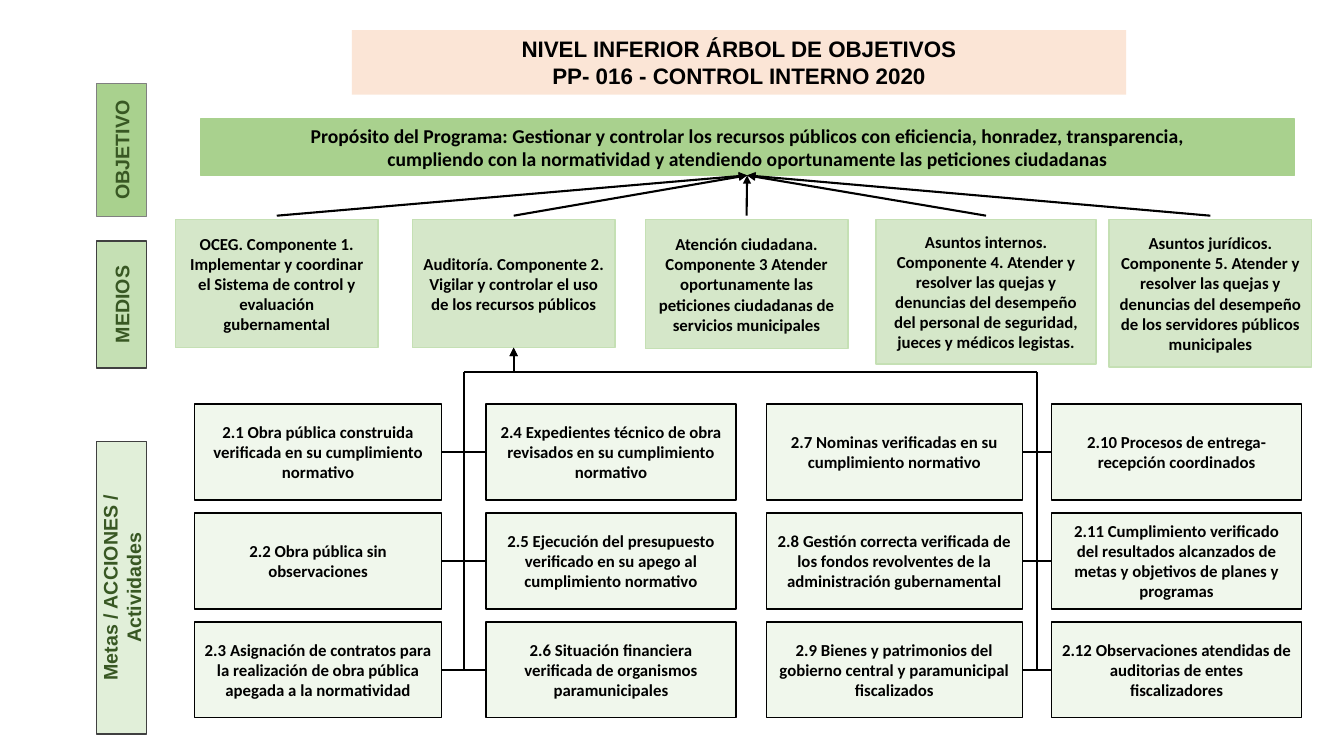
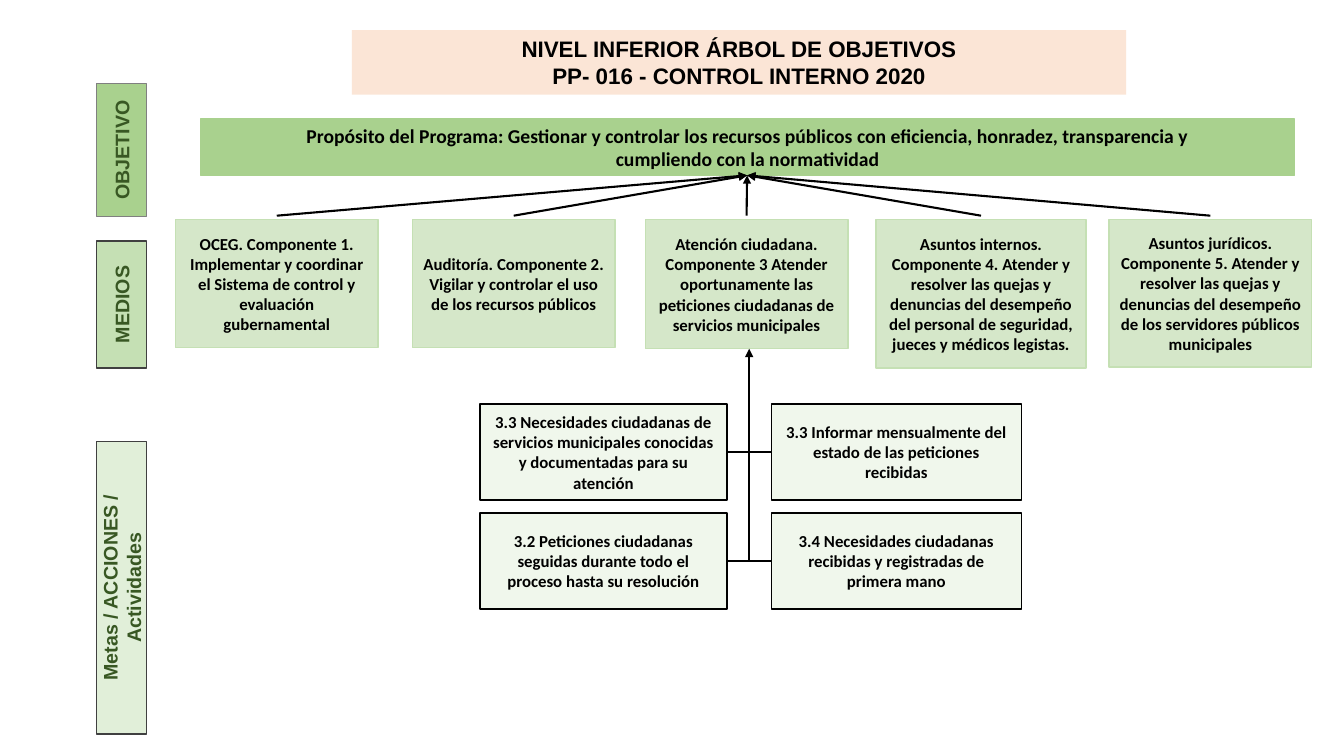
from dataclasses import dataclass

import pptx
import pptx.dml.color
import pptx.enum.shapes
import pptx.enum.text
import pptx.oxml
import pptx.oxml.ns
import pptx.util

SHAPE = pptx.enum.shapes.MSO_SHAPE
CONNECTOR = pptx.enum.shapes.MSO_CONNECTOR
ANCHOR = pptx.enum.text.MSO_ANCHOR
Point = tuple[float, float]

BLACK, DARK_GREEN = "000000", "385723"
MID_GREEN, PALE_GREEN = "A9D18E", "C5E0B4"


@dataclass(frozen=True)
class Style:
    fill: str
    line: str | None
    size: int
    font: str = "Calibri"
    color: str = BLACK
    alpha: int = 100
    shape: int = SHAPE.FLOWCHART_PROCESS
    anchor: int = ANCHOR.MIDDLE


@dataclass(frozen=True)
class Area:
    x: float
    y: float
    w: float
    h: float

    @property
    def cx(self) -> float:
        return self.x + self.w / 2

    @property
    def bottom(self) -> float:
        return self.y + self.h


@dataclass(frozen=True)
class Label:
    text: str
    y: float
    h: float
    style: Style


@dataclass(frozen=True)
class Column:
    x: float
    w: float
    texts: list[str]


@dataclass(frozen=True)
class Tree:
    purpose: str
    internal_size: Point
    parent: int
    pairs: list[tuple[Column, Column]]


TITLE = Style("FBE5D6", None, 16, "Arial", shape=SHAPE.RECTANGLE, anchor=ANCHOR.TOP)
PURPOSE = Style(MID_GREEN, MID_GREEN, 14)
COMPONENT = Style("70AD47", PALE_GREEN, 12, alpha=29)
ACTIVITY = Style(PALE_GREEN, BLACK, 12, alpha=25)

TITLE_TEXT = "NIVEL INFERIOR ÁRBOL DE OBJETIVOS\nPP- 016 - CONTROL INTERNO 2020"
TITLE_AREA = Area(3.49, 0.3, 7.68, 0.64)
PURPOSE_AREA = Area(1.99, 1.18, 10.85, 0.56)
ARROW_TARGET = (7.41, PURPOSE_AREA.bottom)

LABEL_X, LABEL_W = 0.96, 0.49
LABELS = [
    Label("OBJETIVO", 0.83, 1.32, Style(MID_GREEN, "808080", 14, "Arial", DARK_GREEN)),
    Label("MEDIOS", 2.39, 1.26, Style(PALE_GREEN, "404040", 14, "Arial", DARK_GREEN)),
    Label("Metas / ACCIONES / Actividades", 4.38, 2.9,
          Style(PALE_GREEN, "404040", 14, "Arial", DARK_GREEN, 50)),
]

COMPONENT_Y = 2.18
INTERNAL = 3
COMPONENTS = [
    (1.74, 2.01, 1.27, "OCEG. Componente 1. Implementar y coordinar el Sistema de control "
                       "y evaluación gubernamental"),
    (4.09, 2.01, 1.27, "Auditoría. Componente 2. Vigilar y controlar el uso de los "
                       "recursos públicos"),
    (6.4, 2.01, 1.28, "Atención ciudadana. Componente 3 Atender oportunamente las "
                      "peticiones ciudadanas de servicios municipales"),
    (8.69, 2.18, 1.43, "Asuntos internos. Componente 4. Atender y resolver las quejas y "
                       "denuncias del desempeño del personal de seguridad, jueces y "
                       "médicos legistas."),
    (11, 2.01, 1.46, "Asuntos jurídicos. Componente 5. Atender y resolver las quejas y "
                     "denuncias del desempeño de los servidores públicos municipales"),
]

ROW_Y, ROW_PITCH, ROW_H = 4.01, 1.08, 0.95
TRUNK_Y = 3.69

TREES = [
    Tree(
        "Propósito del Programa: Gestionar y controlar los recursos públicos con "
        "eficiencia, honradez, transparencia,\ncumpliendo con la normatividad y "
        "atendiendo oportunamente las peticiones ciudadanas",
        (2.18, 1.43), 1,
        [
            (Column(1.93, 2.45, [
                "2.1 Obra pública construida verificada en su cumplimiento normativo",
                "2.2 Obra pública sin observaciones",
                "2.3 Asignación de contratos para la realización de obra pública "
                "apegada a la normatividad"]),
             Column(4.82, 2.48, [
                "2.4 Expedientes técnico de obra revisados en su cumplimiento normativo",
                "2.5 Ejecución del presupuesto verificado en su apego al cumplimiento "
                "normativo",
                "2.6 Situación financiera verificada de organismos paramunicipales"])),
            (Column(7.6, 2.54, [
                "2.7 Nominas verificadas en su cumplimiento normativo",
                "2.8 Gestión correcta verificada de los fondos revolventes de la "
                "administración gubernamental",
                "2.9 Bienes y patrimonios del gobierno central y paramunicipal "
                "fiscalizados"]),
             Column(10.43, 2.48, [
                "2.10 Procesos de entrega-recepción coordinados",
                "2.11 Cumplimiento verificado del resultados alcanzados de metas y "
                "objetivos de planes y programas",
                "2.12 Observaciones atendidas de auditorias de entes fiscalizadores"])),
        ]),
    Tree(
        "Propósito del Programa: Gestionar y controlar los recursos públicos con "
        "eficiencia, honradez, transparencia y\ncumpliendo con la normatividad",
        (2.08, 1.47), 2,
        [
            (Column(4.76, 2.45, [
                "3.3 Necesidades ciudadanas de servicios municipales conocidas y "
                "documentadas para su atención",
                "3.2 Peticiones ciudadanas seguidas durante todo el proceso hasta su "
                "resolución"]),
             Column(7.65, 2.48, [
                "3.3 Informar mensualmente del estado de las peticiones recibidas",
                "3.4 Necesidades ciudadanas recibidas y registradas de primera mano"])),
        ]),
]


def rgb(color: str) -> pptx.dml.color.RGBColor:
    return pptx.dml.color.RGBColor.from_string(color)


def add_box(s, area: Area, text: str, style: Style, rotation: int = 0):
    sp = s.shapes.add_shape(style.shape, *(pptx.util.Inches(v) for v in
                                           (area.x, area.y, area.w, area.h)))
    sp.rotation = rotation
    sp.shadow.inherit = False
    sp.fill.solid()
    sp.fill.fore_color.rgb = rgb(style.fill)
    if style.alpha < 100:
        clr = sp._element.spPr.find(".//" + pptx.oxml.ns.qn("a:srgbClr"))
        alpha = pptx.oxml.parse_xml(
            f'<a:alpha {pptx.oxml.ns.nsdecls("a")} val="{style.alpha * 1000}"/>')
        clr.append(alpha)
    if style.line:
        sp.line.color.rgb = rgb(style.line)
        sp.line.width = pptx.util.Pt(1)
    else:
        sp.line.fill.background()
    tf = sp.text_frame
    tf.word_wrap = True
    tf.vertical_anchor = style.anchor
    tf.text = text
    for p in tf.paragraphs:
        p.alignment = pptx.enum.text.PP_ALIGN.CENTER
        for r in p.runs:
            r.font.name, r.font.size = style.font, pptx.util.Pt(style.size)
            r.font.bold = True
            r.font.color.rgb = rgb(style.color)
    return sp


def add_line(s, start: Point, end: Point, arrow: bool = False, bent: bool = False) -> None:
    """Draw a line; a bent one runs horizontally first and then turns once."""
    kind = CONNECTOR.ELBOW if bent else CONNECTOR.STRAIGHT
    sp = s.shapes.add_connector(kind, *(pptx.util.Inches(v) for v in (*start, *end)))
    sp.line.color.rgb = rgb(BLACK)
    sp.line.width = pptx.util.Pt(1.5)
    spPr = sp._element.spPr
    ns = pptx.oxml.ns.nsdecls("a")
    if bent:
        spPr.find(pptx.oxml.ns.qn("a:prstGeom")).set("prst", "bentConnector2")
    if arrow:
        sp.line._get_or_add_ln().append(
            pptx.oxml.parse_xml(f'<a:tailEnd {ns} type="triangle"/>'))
    spPr.append(pptx.oxml.parse_xml(f"<a:effectLst {ns}/>"))


def add_label(s, label: Label) -> None:
    """Draw a side label whose text reads upwards."""
    cx, cy = LABEL_X + LABEL_W / 2, label.y + label.h / 2
    area = Area(cx - label.h / 2, cy - LABEL_W / 2, label.h, LABEL_W)
    add_box(s, area, label.text, label.style, 270)


def component_areas(tree: Tree) -> list[Area]:
    areas = [Area(x, COMPONENT_Y, w, h) for x, w, h, _ in COMPONENTS]
    areas[INTERNAL] = Area(areas[INTERNAL].x, COMPONENT_Y, *tree.internal_size)
    return areas


def add_pair(s, left: Column, right: Column) -> Point:
    """Draw two columns of activities with rungs; return the foot of their spine."""
    for column in (left, right):
        for i, text in enumerate(column.texts):
            area = Area(column.x, ROW_Y + i * ROW_PITCH, column.w, ROW_H)
            add_box(s, area, text, ACTIVITY)
    edge = left.x + left.w
    for i in range(len(left.texts)):
        y = ROW_Y + i * ROW_PITCH + ROW_H / 2
        add_line(s, (right.x, y), (edge, y))
    return (edge + right.x) / 2, y


def add_tree(s, tree: Tree) -> None:
    add_box(s, TITLE_AREA, TITLE_TEXT, TITLE)
    for label in LABELS:
        add_label(s, label)
    add_box(s, PURPOSE_AREA, tree.purpose, PURPOSE)
    areas = component_areas(tree)
    for area in areas:
        add_line(s, (area.cx, COMPONENT_Y - 0.04), ARROW_TARGET, arrow=True)
    feet = [add_pair(s, left, right) for left, right in tree.pairs]
    for area, (_, _, _, text) in zip(areas, COMPONENTS):
        add_box(s, area, text, COMPONENT)
    parent = areas[tree.parent]
    for x, y in feet:
        if len(feet) == 1:
            add_line(s, (x, y), (x, parent.bottom), arrow=True)
        else:
            add_line(s, (x, TRUNK_Y), (x, y))
            add_line(s, (x, TRUNK_Y), (parent.cx, parent.bottom), arrow=True, bent=True)


def main() -> None:
    prs = pptx.Presentation()
    prs.slide_width, prs.slide_height = pptx.util.Inches(13.33), pptx.util.Inches(7.5)
    for tree in TREES:
        add_tree(prs.slides.add_slide(prs.slide_layouts[6]), tree)
    prs.save("out.pptx")


if __name__ == "__main__":
    main()
